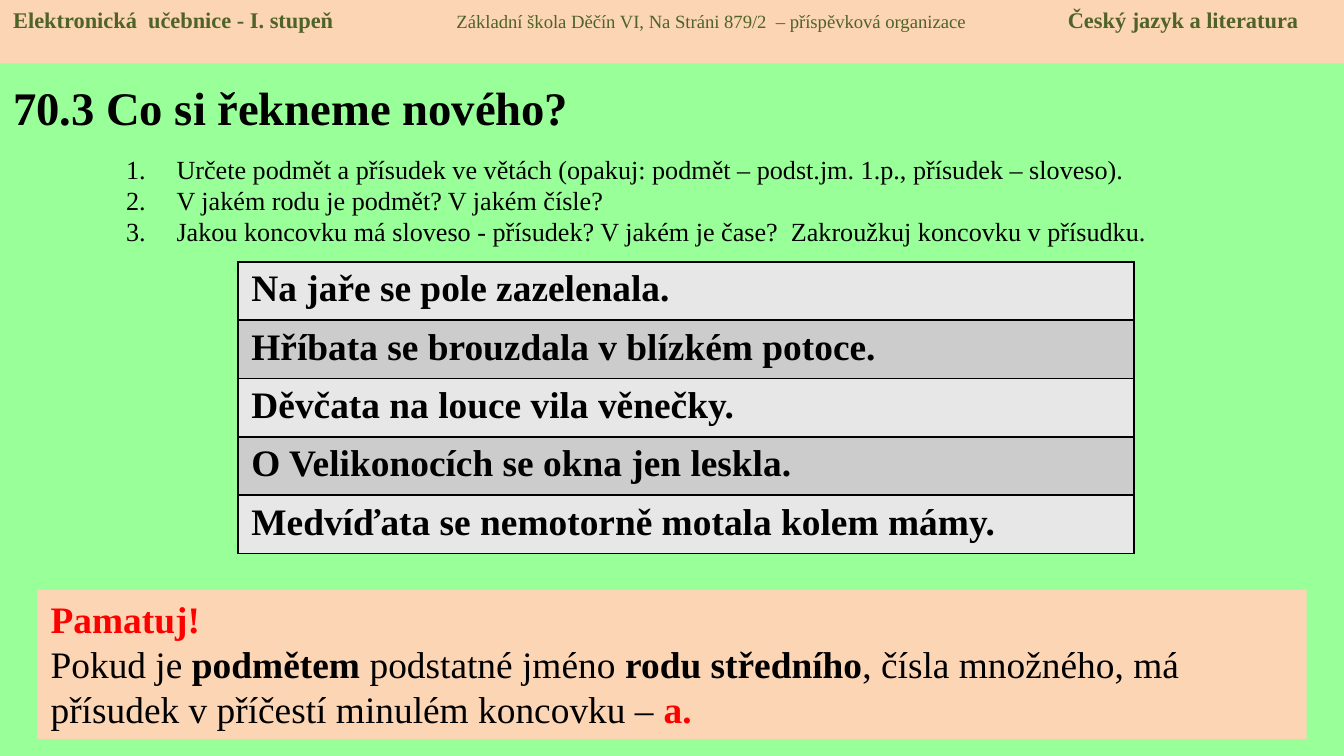
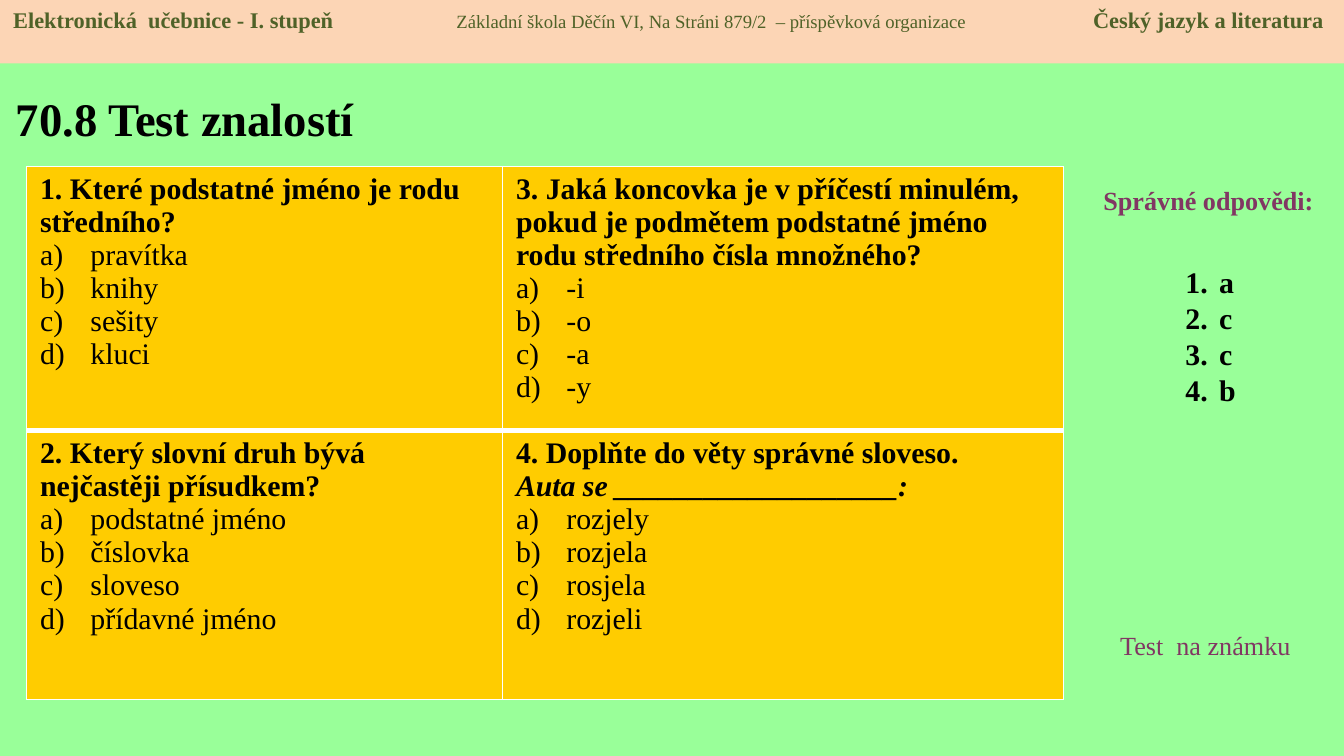
from dataclasses import dataclass

from lxml import etree
from pptx import Presentation
from pptx.dml.color import RGBColor
from pptx.enum.shapes import MSO_SHAPE as Shape
from pptx.enum.text import MSO_ANCHOR as Anchor, MSO_AUTO_SIZE as AutoSize, PP_ALIGN as Align
from pptx.oxml.ns import qn
from pptx.util import Pt


@dataclass(frozen=True)
class Theme:
    font: str = "Times New Roman"
    page: str = "99FF99"
    band: str = "FCD5B5"
    header: str = "4F6228"
    ink: str = "000000"
    alert: str = "FF0000"
    accent: str = "813763"
    border: str = "FFFFFF"
    quiz: str = "FFCC00"
    stripes: tuple = ("E7E7E7", "CCCCCC")
    title_size: float = 25
    large: float = 20
    quiz_size: float = 16
    body: float = 14
    header_size: float = 12
    small: float = 10


THEME = Theme()
WIDTH, HEIGHT, HEADER_HEIGHT = 720, 405, 34


def paint(fill, color):
    fill.solid()
    fill.fore_color.rgb = RGBColor.from_string(color)


def add_span(para, text, size=THEME.body, color=THEME.ink, bold=False, italic=False):
    span = para.add_run()
    span.text = text
    font = span.font
    font.name, font.size, font.bold, font.italic = THEME.font, Pt(size), bold, italic
    font.color.rgb = RGBColor.from_string(color)


def set_numbering(para, scheme, indent):
    props = para._p.get_or_add_pPr()
    props.set("marL", str(Pt(indent)))
    props.set("indent", str(-Pt(indent)))
    etree.SubElement(props, qn("a:buFont"), typeface=THEME.font)
    etree.SubElement(props, qn("a:buAutoNum"), type=scheme)


def set_tabs(para, stops):
    tabs = etree.SubElement(para._p.get_or_add_pPr(), qn("a:tabLst"))
    for stop in stops:
        etree.SubElement(tabs, qn("a:tab"), pos=str(Pt(stop)), algn="l")


def write(frame, lines, numbering=None, indent=27, tabs=(), align=Align.LEFT,
          spacing=None, **style):
    """Add lines to a frame; a line is a string or a list of (text, format) pairs."""
    for line in lines:
        first = frame.paragraphs[0]
        para = frame.add_paragraph() if first.runs else first
        if numbering:
            set_numbering(para, numbering, indent)
        if tabs:
            set_tabs(para, tabs)
        para.alignment = align
        if spacing:
            para.line_spacing = Pt(spacing)
        for text, extra in [(line, {})] if isinstance(line, str) else line:
            add_span(para, text, **{**style, **extra})


def set_border(cell, color, **widths):
    """Draw the cell edges L, R, T and B with the given widths."""
    props = cell._tc.get_or_add_tcPr()
    for place, (edge, width) in enumerate(widths.items()):
        line = etree.Element(qn(f"a:ln{edge}"), w=str(Pt(width)))
        fill = etree.SubElement(line, qn("a:solidFill"))
        etree.SubElement(fill, qn("a:srgbClr"), val=color)
        props.insert(place, line)


class Lesson:
    def __init__(self):
        self.deck = Presentation()
        self.deck.slide_width, self.deck.slide_height = Pt(WIDTH), Pt(HEIGHT)
        self.page = None

    def new_page(self, title, title_at, subject_tab):
        self.page = self.deck.slides.add_slide(self.deck.slide_layouts[6])
        paint(self.page.background.fill, THEME.page)
        box = self.text(title_at, [title], size=THEME.title_size, bold=True)
        box.text_frame.auto_size = AutoSize.NONE
        box.text_frame.vertical_anchor = Anchor.MIDDLE
        header = [("Elektronická  učebnice - I. stupeň\t", {}),
                  ("Základní škola Děčín VI, Na Stráni 879/2  – příspěvková organizace\t",
                   dict(size=THEME.small, bold=False)),
                  ("Český jazyk a literatura", {})]
        self.panel((0, 0, WIDTH, HEADER_HEIGHT), [header], tabs=(237.5, subject_tab),
                   size=THEME.header_size, color=THEME.header, bold=True)

    def text(self, at, lines, **style):
        box = self.page.shapes.add_textbox(*map(Pt, at))
        box.text_frame.word_wrap = True
        box.text_frame.auto_size = AutoSize.SHAPE_TO_FIT_TEXT
        write(box.text_frame, lines, **style)
        return box

    def panel(self, at, lines, **style):
        box = self.page.shapes.add_shape(Shape.RECTANGLE, *map(Pt, at))
        box.shadow.inherit = False
        paint(box.fill, THEME.band)
        box.line.fill.background()
        box.text_frame.word_wrap = True
        box.text_frame.vertical_anchor = Anchor.TOP
        write(box.text_frame, lines, **style)

    def table(self, left, top, columns, rows):
        frame = self.page.shapes.add_table(len(rows), len(columns), Pt(left), Pt(top),
                                           Pt(sum(columns)), Pt(sum(rows)))
        table = frame.table
        table.first_row = table.horz_banding = False
        for column, width in zip(table.columns, columns):
            column.width = Pt(width)
        for row, height in zip(table.rows, rows):
            row.height = Pt(height)
        return table


def build_new_topic(lesson):
    lesson.new_page("70.3 Co si řekneme nového?", (0, 34, 695, 47), 565)
    lesson.panel((20, 316, 680, 80), [
        [("Pamatuj!", dict(color=THEME.alert, bold=True))],
        [("Pokud je ", {}), ("podmětem", dict(bold=True)), (" podstatné jméno ", {}),
         ("rodu středního", dict(bold=True)),
         (", čísla množného, má přísudek v příčestí minulém koncovku – ", {}),
         ("a.", dict(color=THEME.alert, bold=True))],
    ], size=THEME.large)
    lesson.text((60.5, 78.5, 595.5, 58.5), [
        "Určete podmět a přísudek ve větách (opakuj: podmět – podst.jm. 1.p., přísudek – sloveso).",
        "V jakém rodu je podmět? V jakém čísle?",
        "Jakou koncovku má sloveso - přísudek? V jakém je čase?  Zakroužkuj koncovku v přísudku.",
    ], numbering="arabicPeriod")
    sentences = ["Na jaře se pole zazelenala.",
                 "Hříbata se brouzdala v blízkém potoce.",
                 "Děvčata na louce vila věnečky.",
                 "O Velikonocích se okna jen leskla.",
                 "Medvíďata se nemotorně motala kolem mámy."]
    table = lesson.table(127.5, 140.25, [480], [31.2] * len(sentences))
    for index, sentence in enumerate(sentences):
        cell = table.cell(index, 0)
        paint(cell.fill, THEME.stripes[index % 2])
        set_border(cell, THEME.ink, L=1, R=1, T=1, B=1)
        write(cell.text_frame, [sentence], size=THEME.large, bold=True)


def build_quiz(lesson):
    lesson.new_page("70.8 Test znalostí", (1.5, 39.5, 230, 47), 578.5)
    lesson.text((579.5, 95, 136, 24.5), ["Správné odpovědi:"],
                align=Align.CENTER, color=THEME.accent, bold=True)
    questions = [
        [(["1. Které podstatné jméno je rodu středního?"],
          ["pravítka", "knihy", "sešity", "kluci"]),
         (["3. Jaká koncovka je v příčestí minulém,", "pokud je podmětem podstatné jméno",
           "rodu středního čísla množného?"],
          ["-i", "-o", "-a", "-y"])],
        [(["2. Který slovní druh bývá", "nejčastěji přísudkem?"],
          ["podstatné jméno", "číslovka", "sloveso", "přídavné jméno"]),
         (["4. Doplňte do věty správné sloveso.",
           [("Auta se ___________________:", dict(italic=True))]],
          ["rozjely", "rozjela", "rosjela", "rozjeli"])],
    ]
    table = lesson.table(14.25, 89.25, [255, 300.5], [141.5, 144])
    style = dict(size=THEME.quiz_size, spacing=17.7)
    for row, pair in enumerate(questions):
        for column, (question, options) in enumerate(pair):
            cell = table.cell(row, column)
            paint(cell.fill, THEME.quiz)
            top, bottom = (1, 3) if row == 0 else (3, 1)
            set_border(cell, THEME.border, L=1, R=1, T=top, B=bottom)
            write(cell.text_frame, question, bold=True, **style)
            write(cell.text_frame, options, numbering="alphaLcParenR", **style)
    lesson.text((628, 138, 40, 124), ["a", "c", "c", "b"], numbering="arabicPeriod",
                indent=18, size=THEME.quiz_size, bold=True)
    lesson.text((593, 333.5, 113, 24.5), ["Test  na známku"], color=THEME.accent)


def main():
    lesson = Lesson()
    build_new_topic(lesson)
    build_quiz(lesson)
    lesson.deck.save("out.pptx")


if __name__ == "__main__":
    main()
